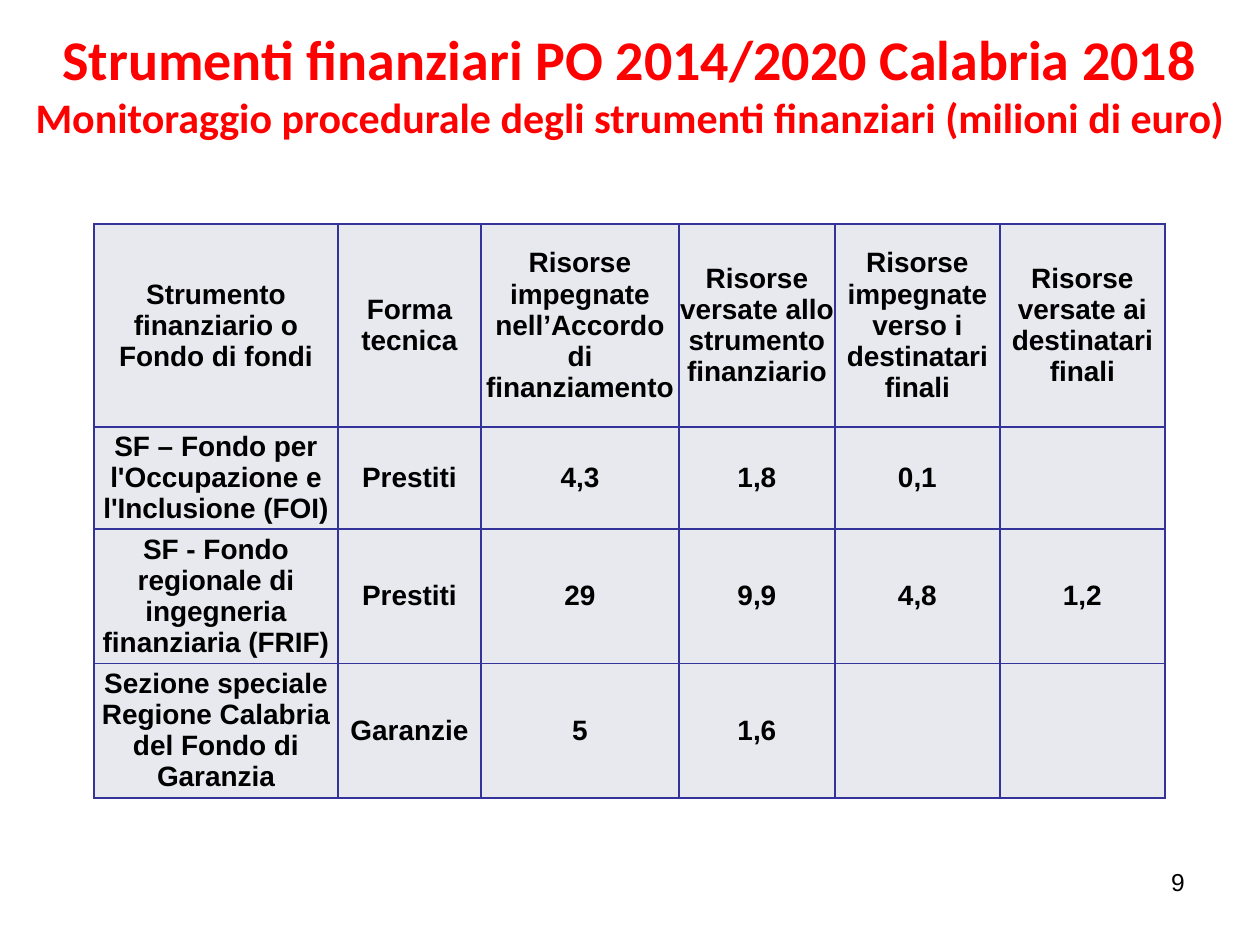
"""Build the slide on the procedural monitoring of financial instruments."""
from copy import deepcopy
from dataclasses import dataclass

from lxml.etree import SubElement
from pptx import Presentation
from pptx.dml.color import RGBColor as RGB
from pptx.enum.text import MSO_ANCHOR as Anchor, MSO_AUTO_SIZE as AutoSize, PP_ALIGN as Align
from pptx.oxml.ns import qn
from pptx.util import Emu, Pt

EMU_PER_PX = 914400 / 126


@dataclass(frozen=True)
class Theme:
    red: RGB = RGB(0xFF, 0x00, 0x00)
    black: RGB = RGB(0x00, 0x00, 0x00)
    cell_fill: RGB = RGB(0xE8, 0xE8, 0xEF)
    border: str = "333399"
    border_pt: int = 1
    title_font: str = "Calibri"
    body_font: str = "Arial"
    title_pt: int = 32
    subtitle_pt: int = 24
    cell_pt: int = 16
    number_pt: int = 14


@dataclass(frozen=True)
class Box:
    x: int
    y: int
    w: int
    h: int


@dataclass(frozen=True)
class Column:
    width: int
    header: str


@dataclass(frozen=True)
class Row:
    height: int
    values: tuple[str, ...]


THEME = Theme()
TITLE = ("Strumenti finanziari PO 2014/2020 Calabria 2018",
         "Monitoraggio procedurale degli strumenti finanziari (milioni di euro)")
COLUMNS = (
    Column(244, "Strumento finanziario o Fondo di fondi"),
    Column(143, "Forma tecnica"),
    Column(198, "Risorse impegnate nell’Accordo di finanziamento"),
    Column(156, "Risorse versate allo strumento finanziario"),
    Column(165, "Risorse impegnate verso i destinatari finali"),
    Column(165, "Risorse versate ai destinatari finali"),
)
ROWS = (
    Row(203, tuple(c.header for c in COLUMNS)),
    Row(102, ("SF – Fondo per l'Occupazione e l'Inclusione (FOI)",
              "Prestiti", "4,3", "1,8", "0,1", "")),
    Row(126, ("SF - Fondo regionale di ingegneria finanziaria (FRIF)",
              "Prestiti", "29", "9,9", "4,8", "1,2")),
    Row(126, ("Sezione speciale Regione Calabria del Fondo di Garanzia",
              "Garanzie", "5", "1,6", "", "")),
)


def px(n: int) -> Emu:
    return Emu(round(n * EMU_PER_PX))


def bounds(box: Box) -> tuple[Emu, ...]:
    return px(box.x), px(box.y), px(box.w), px(box.h)


def style_run(r, name: str, size: int, color: RGB, bold: bool) -> None:
    r.font.name, r.font.size, r.font.bold = name, Pt(size), bold
    r.font.color.rgb = color


def set_title(sp, box: Box) -> None:
    sp.left, sp.top, sp.width, sp.height = bounds(box)
    tf = sp.text_frame
    tf.text = "\v".join(TITLE)
    tf.word_wrap, tf.auto_size = True, AutoSize.NONE
    tf.vertical_anchor = Anchor.MIDDLE
    p = tf.paragraphs[0]
    p.alignment = Align.CENTER
    for r, size in zip(p.runs, (THEME.title_pt, THEME.subtitle_pt)):
        style_run(r, THEME.title_font, size, THEME.red, True)
    line_break = p._p.find(qn("a:br"))
    line_break.append(deepcopy(p.runs[0]._r.find(qn("a:rPr"))))


def add_borders(cell) -> None:
    props = cell._tc.get_or_add_tcPr()
    for i, side in enumerate(("lnL", "lnR", "lnT", "lnB")):
        ln = SubElement(props, qn(f"a:{side}"), w=str(Pt(THEME.border_pt)))
        fill = SubElement(ln, qn("a:solidFill"))
        SubElement(fill, qn("a:srgbClr"), val=THEME.border)
        props.insert(i, ln)


def fill_cell(cell, text: str) -> None:
    cell.margin_left = cell.margin_right = cell.margin_top = cell.margin_bottom = 0
    cell.vertical_anchor = Anchor.MIDDLE
    cell.fill.solid()
    cell.fill.fore_color.rgb = THEME.cell_fill
    add_borders(cell)
    if text:
        cell.text_frame.text = text
        p = cell.text_frame.paragraphs[0]
        p.alignment = Align.CENTER
        style_run(p.runs[0], THEME.body_font, THEME.cell_pt, THEME.black, True)


def add_funds_table(s, x: int, y: int) -> None:
    box = Box(x, y, sum(c.width for c in COLUMNS), sum(r.height for r in ROWS))
    table = s.shapes.add_table(len(ROWS), len(COLUMNS), *bounds(box)).table
    table.first_row = table.horz_banding = False
    for col, column in zip(table.columns, COLUMNS):
        col.width = px(column.width)
    for i, row in enumerate(ROWS):
        table.rows[i].height = px(row.height)
        for j, text in enumerate(row.values):
            fill_cell(table.cell(i, j), text)


def add_page_number(s, box: Box, number: str) -> None:
    tf = s.shapes.add_textbox(*bounds(box)).text_frame
    tf.word_wrap = True
    tf.text = number
    p = tf.paragraphs[0]
    p.alignment = Align.RIGHT
    style_run(p.runs[0], THEME.body_font, THEME.number_pt, THEME.black, False)


def main() -> None:
    prs = Presentation()
    prs.slide_width, prs.slide_height = px(1260), px(945)
    s = prs.slides.add_slide(prs.slide_layouts[5])
    set_title(s.shapes.title, Box(15, 55, 1230, 56))
    add_page_number(s, Box(903, 861, 294, 66), "9")
    add_funds_table(s, 94, 224)
    prs.save("out.pptx")


if __name__ == "__main__":
    main()
